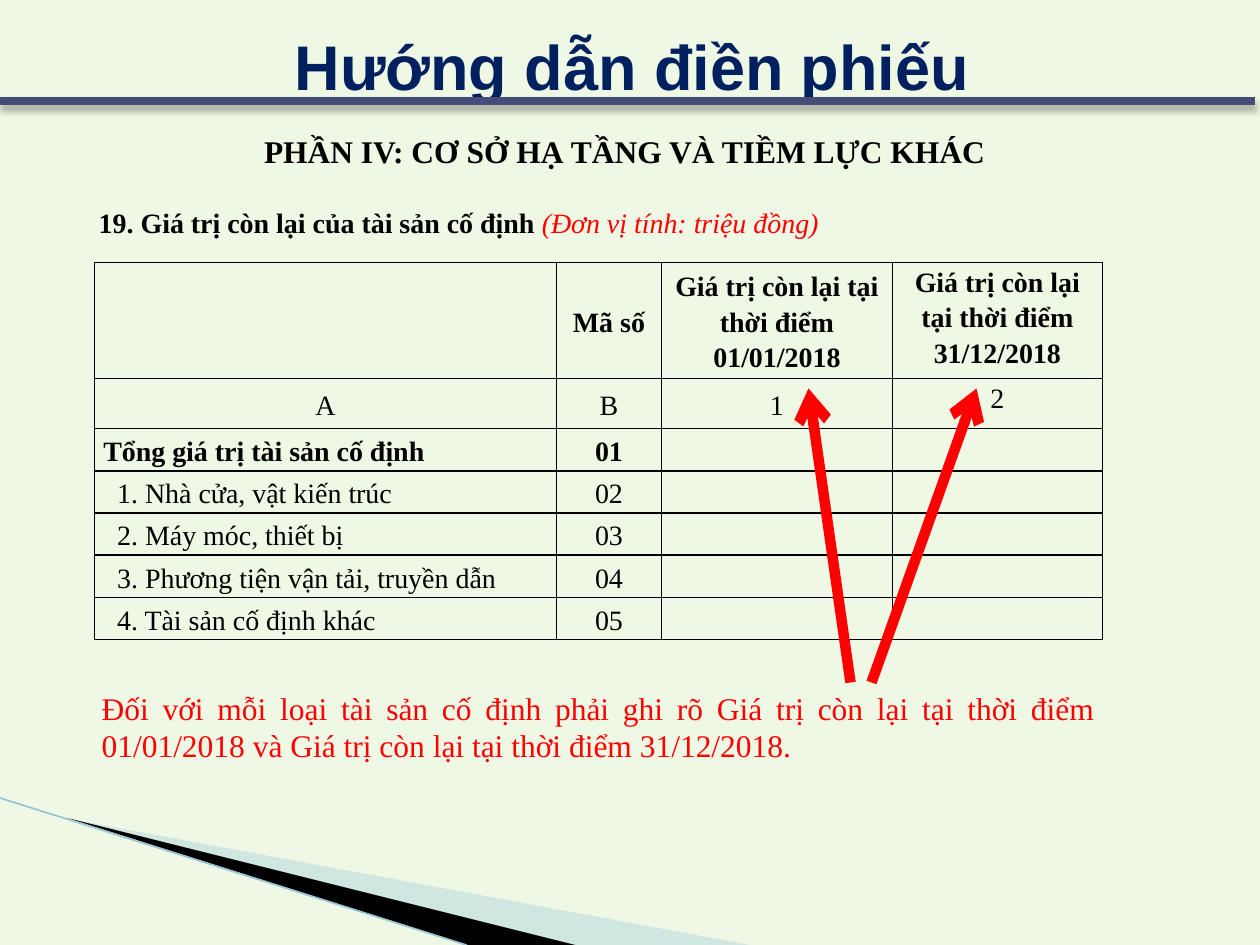
from lxml.etree import SubElement
from pptx import Presentation
from pptx.dml.color import RGBColor
from pptx.enum.shapes import MSO_CONNECTOR
from pptx.enum.text import MSO_ANCHOR, PP_ALIGN
from pptx.oxml import parse_xml
from pptx.oxml.ns import nsdecls, qn
from pptx.util import Inches, Pt

COLUMNS, ROWS = 120, 90
SERIF = "Times New Roman"
BLACK, RED = "000000", "FF0000"


def color(code):
    return RGBColor.from_string(code)


def apply(target, values):
    for name, value in values.items():
        setattr(target, name, value)


class Deck:
    body = {"name": SERIF, "size": Pt(16), "bold": False}

    def __init__(self, background):
        self.presentation = Presentation()
        apply(self.presentation, {"slide_width": Inches(10), "slide_height": Inches(7.5)})
        self.slide = self.presentation.slides.add_slide(self.presentation.slide_layouts[6])
        self.slide.background.fill.solid()
        self.slide.background.fill.fore_color.rgb = color(background)

    def x(self, columns):
        return round(self.presentation.slide_width * columns / COLUMNS)

    def y(self, rows):
        return round(self.presentation.slide_height * rows / ROWS)

    def box(self, left, top, width, height):
        return self.x(left), self.y(top), self.x(width), self.y(height)

    def fill_paragraph(self, paragraph, pieces, **layout):
        apply(paragraph, layout)
        for wording, ink, style in pieces:
            run = paragraph.add_run()
            run.text = wording
            apply(run.font, {**self.body, **style})
            run.font.color.rgb = color(ink)

    def text(self, area, pieces, frame=None, **layout):
        text_frame = self.slide.shapes.add_textbox(*self.box(*area)).text_frame
        apply(text_frame, {"word_wrap": True, "vertical_anchor": MSO_ANCHOR.MIDDLE, **(frame or {})})
        self.fill_paragraph(text_frame.paragraphs[0], pieces, **layout)

    def wedge(self, corners, fill, opacity=100):
        points = [(self.x(column), self.y(row)) for column, row in corners]
        builder = self.slide.shapes.build_freeform(*points[0])
        builder.add_line_segments(points[1:], close=True)
        shape = builder.convert_to_shape()
        shape.shadow.inherit = False
        shape.line.fill.background()
        shape.fill.solid()
        shape.fill.fore_color.rgb = color(fill)
        if opacity < 100:
            ink = shape._element.spPr.find(qn("a:solidFill")).find(qn("a:srgbClr"))
            SubElement(ink, qn("a:alpha"), val=str(opacity * 1000))

    def line(self, start, end, ink, width, arrow=False, shadow=False):
        connector = self.slide.shapes.add_connector(
            MSO_CONNECTOR.STRAIGHT,
            self.x(start[0]), self.y(start[1]), self.x(end[0]), self.y(end[1]))
        connector.line.color.rgb = color(ink)
        connector.line.width = Pt(width)
        properties = connector._element.spPr
        if arrow:
            SubElement(properties.find(qn("a:ln")), qn("a:tailEnd"), type="arrow")
        effects = SubElement(properties, qn("a:effectLst"))
        if shadow:
            cast = SubElement(effects, qn("a:outerShdw"), blurRad=str(Pt(4)),
                              dist=str(Pt(3)), dir="5400000", rotWithShape="0")
            SubElement(SubElement(cast, qn("a:srgbClr"), val=BLACK),
                       qn("a:alpha"), val="35000")

    def border(self, cell, ink):
        for position, side in enumerate("LRTB"):
            cell._tc.get_or_add_tcPr().insert(position, parse_xml(
                f'<a:ln{side} {nsdecls("a")} w="{Pt(1)}"><a:solidFill>'
                f'<a:srgbClr val="{ink}"/></a:solidFill></a:ln{side}>'))

    def table(self, left, top, widths, heights, records):
        area = self.box(left, top, sum(widths), sum(heights))
        grid = self.slide.shapes.add_table(len(heights), len(widths), *area).table
        apply(grid, {"first_row": False, "horz_banding": False})
        for column, width in zip(grid.columns, widths):
            column.width = self.x(width)
        for row, height in zip(grid.rows, heights):
            row.height = self.y(height)
        for r, record in enumerate(records):
            for c, wording in enumerate(record):
                cell = grid.cell(r, c)
                label = c == 0 and r > 1
                raised = c == 3 and r < 2
                indent = 0.11 if label and r > 2 else 0
                apply(cell, {
                    "margin_left": Inches(0.07 + indent), "margin_right": Inches(0.07),
                    "margin_top": 0, "margin_bottom": 0,
                    "vertical_anchor": MSO_ANCHOR.TOP if raised else MSO_ANCHOR.MIDDLE})
                cell.fill.background()
                self.border(cell, BLACK)
                if wording:
                    self.fill_paragraph(
                        cell.text_frame.paragraphs[0],
                        [(wording, BLACK, {"bold": r in (0, 2)})],
                        alignment=PP_ALIGN.LEFT if label else PP_ALIGN.CENTER,
                        line_spacing=1.15)


def main():
    deck = Deck("EFF8E5")
    deck.wedge([(6.6, 78), (71.4, 90), (54.7, 90)], "A0CBDC", 40)
    deck.wedge([(6.4, 77.9), (54.8, 90), (44.6, 90)], BLACK)
    deck.line((0, 76), (44.4, 90), "97C5D8", 0.95)

    deck.text((0.4, 0, 119.6, 9.6),
              [("Hướng dẫn điền phiếu", "002060",
                {"name": "Arial", "size": Pt(36), "bold": True})],
              alignment=PP_ALIGN.CENTER, line_spacing=1.4)
    deck.line((0, 9.6), (119.5, 9.6), "474B78", 4.33, shadow=True)
    deck.text((6, 12, 107, 4.8),
              [("PHẦN IV: CƠ SỞ HẠ TẦNG VÀ TIỀM LỰC KHÁC", BLACK,
                {"size": Pt(18), "bold": True})],
              alignment=PP_ALIGN.CENTER)

    assets = ["Tổng giá trị tài sản cố định", "1. Nhà cửa, vật kiến trúc",
              "2. Máy móc, thiết bị", "3. Phương tiện vận tải, truyền dẫn",
              "4. Tài sản cố định khác"]
    dates = ["01/01/2018", "31/12/2018"]
    header = ["", "Mã số"] + [f"Giá trị còn lại tại thời điểm {date}" for date in dates]
    records = [header, ["A", "B", "1", "2"]]
    records += [[asset, f"{code:02}", "", ""] for code, asset in enumerate(assets, 1)]
    deck.table(9, 25, [44, 10, 22, 20], [11, 4.8] + [4.02] * len(assets), records)

    deck.text((7, 19, 112, 4.4),
              [("19. Giá trị còn lại của tài sản cố định ", BLACK, {"bold": True}),
               ("(Đơn vị tính: triệu đồng)", RED, {"italic": True})],
              frame={"margin_left": Inches(0.2)})
    deck.text((8.5, 65, 97, 8.5),
              [("Đối với mỗi loại tài sản cố định phải ghi rõ Giá trị còn lại tại thời điểm "
                "01/01/2018 và Giá trị còn lại tại thời điểm 31/12/2018.", RED,
                {"size": Pt(18)})],
              frame={"vertical_anchor": MSO_ANCHOR.TOP}, alignment=PP_ALIGN.JUSTIFY)
    for note_column, value_column in ((81, 77), (83, 93)):
        deck.line((note_column, 65), (value_column, 37), RED, 6, arrow=True)

    deck.presentation.save("out.pptx")


if __name__ == "__main__":
    main()
